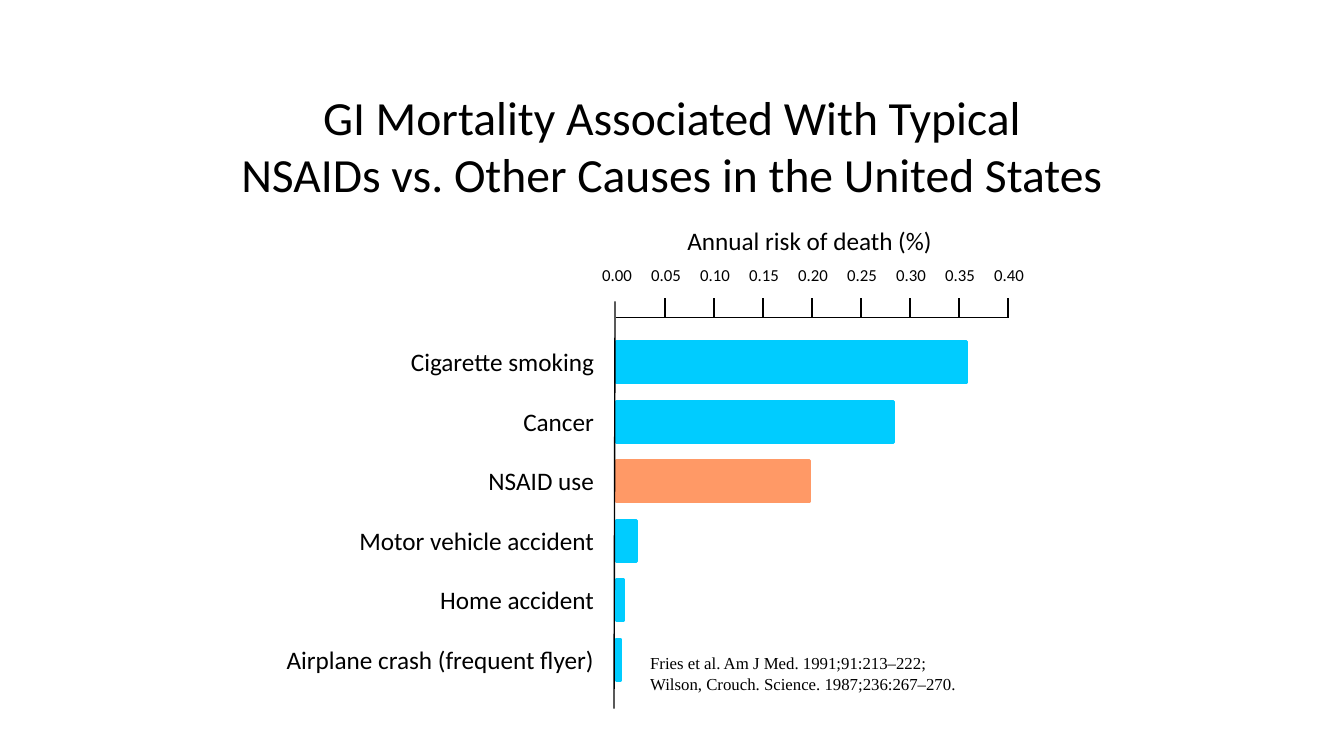
from lxml import etree
from pptx import Presentation
from pptx.dml.color import RGBColor
from pptx.enum.shapes import MSO_CONNECTOR, MSO_SHAPE
from pptx.enum.text import PP_ALIGN
from pptx.oxml.ns import qn
from pptx.util import Inches, Pt

LEFT, CENTER, RIGHT = PP_ALIGN.LEFT, PP_ALIGN.CENTER, PP_ALIGN.RIGHT
RECTANGLE = MSO_SHAPE.RECTANGLE
STRAIGHT = MSO_CONNECTOR.STRAIGHT

BLACK, CYAN, ORANGE = "000000", "00CCFF", "FF9966"

# Scale above the bars
AXIS_X = 6.11
TICK_TOP, SCALE_Y = 2.96, 3.15
TICK_COUNT, TICK_GAP, TICK_STEP = 9, 0.486, 0.05
TICK_LABEL_WIDTH = 0.5

# Rows of bars: cause, label width, bar length, colour
ROW_TOP, ROW_PITCH = 3.39, 0.59
BAR_HEIGHT = 0.41
LABEL_RIGHT = 5.99
CAUSES = [
    ("Cigarette smoking", 2.04, 3.48, CYAN),
    ("Cancer", 0.91, 2.75, CYAN),
    ("NSAID use", 1.26, 1.92, ORANGE),
    ("Motor vehicle accident", 2.55, 0.2, CYAN),
    ("Home accident", 1.74, 0.08, CYAN),
    ("Airplane crash (frequent flyer)", 3.27, 0.05, CYAN),
]


def rgb(hex_color):
    return RGBColor.from_string(hex_color)


def add_text(slide, box, lines, size, align, font="Calibri", wrap=True):
    frame = slide.shapes.add_textbox(*map(Inches, box)).text_frame
    frame.word_wrap = wrap
    font_format = {"name": font, "size": Pt(size)}
    for index, line in enumerate(lines):
        paragraph = frame.paragraphs[0] if index == 0 else frame.add_paragraph()
        paragraph.alignment = align
        run = paragraph.add_run()
        run.text = line
        for attribute, value in font_format.items():
            setattr(run.font, attribute, value)
        run.font.color.rgb = rgb(BLACK)


def add_line(slide, x1, y1, x2, y2):
    line = slide.shapes.add_connector(STRAIGHT, *map(Inches, (x1, y1, x2, y2)))
    line.line.color.rgb = rgb(BLACK)
    line.line.width = Pt(1)
    etree.SubElement(line._element.spPr, qn("a:effectLst"))


def add_bar(slide, top, length, color):
    box = (AXIS_X, top, length, BAR_HEIGHT)
    bar = slide.shapes.add_shape(RECTANGLE, *map(Inches, box))
    bar.shadow.inherit = False
    bar.fill.solid()
    bar.fill.fore_color.rgb = rgb(color)
    bar.line.color.rgb = rgb(color)
    bar.line.width = Pt(2)


def add_scale(slide):
    add_text(slide, (6.08, 2.19, 3.9, 0.4), ["Annual risk of death (%)"], 18, CENTER)
    add_line(slide, AXIS_X, SCALE_Y, 10, SCALE_Y)
    for index in range(TICK_COUNT):
        x = AXIS_X + index * TICK_GAP
        if index:  # the vertical axis marks zero
            add_line(slide, x, TICK_TOP, x, SCALE_Y)
        label_box = (x + 0.01 - TICK_LABEL_WIDTH / 2, 2.58, TICK_LABEL_WIDTH, 0.3)
        add_text(slide, label_box, [f"{index * TICK_STEP:.2f}"], 12, CENTER, wrap=False)


def add_causes(slide):
    for index, (cause, label_width, length, color) in enumerate(CAUSES):
        top = ROW_TOP + index * ROW_PITCH
        add_bar(slide, top, length, color)
        label_box = (LABEL_RIGHT - label_width, top, label_width, 0.4)
        add_text(slide, label_box, [cause], 18, RIGHT, wrap=False)


def main():
    prs = Presentation()
    prs.slide_width, prs.slide_height = Inches(13.33), Inches(7.5)
    slide = prs.slides.add_slide(prs.slide_layouts[6])

    # Title
    title = ["GI Mortality Associated With Typical",
             "NSAIDs vs. Other Causes in the United States"]
    add_text(slide, (1.67, 0.82, 9.99, 1.24), title, 34, CENTER)

    # Bars, scale and vertical axis
    add_causes(slide)
    add_scale(slide)
    add_line(slide, 6.1, 2.99, 6.09, 7.03)

    # References
    references = ["Fries et al. Am J Med. 1991;91:213–222;",
                  "Wilson, Crouch. Science. 1987;236:267–270."]
    add_text(slide, (6.35, 6.43, 4.92, 0.5), references, 12, LEFT, "Times New Roman")

    prs.save("out.pptx")


if __name__ == "__main__":
    main()
